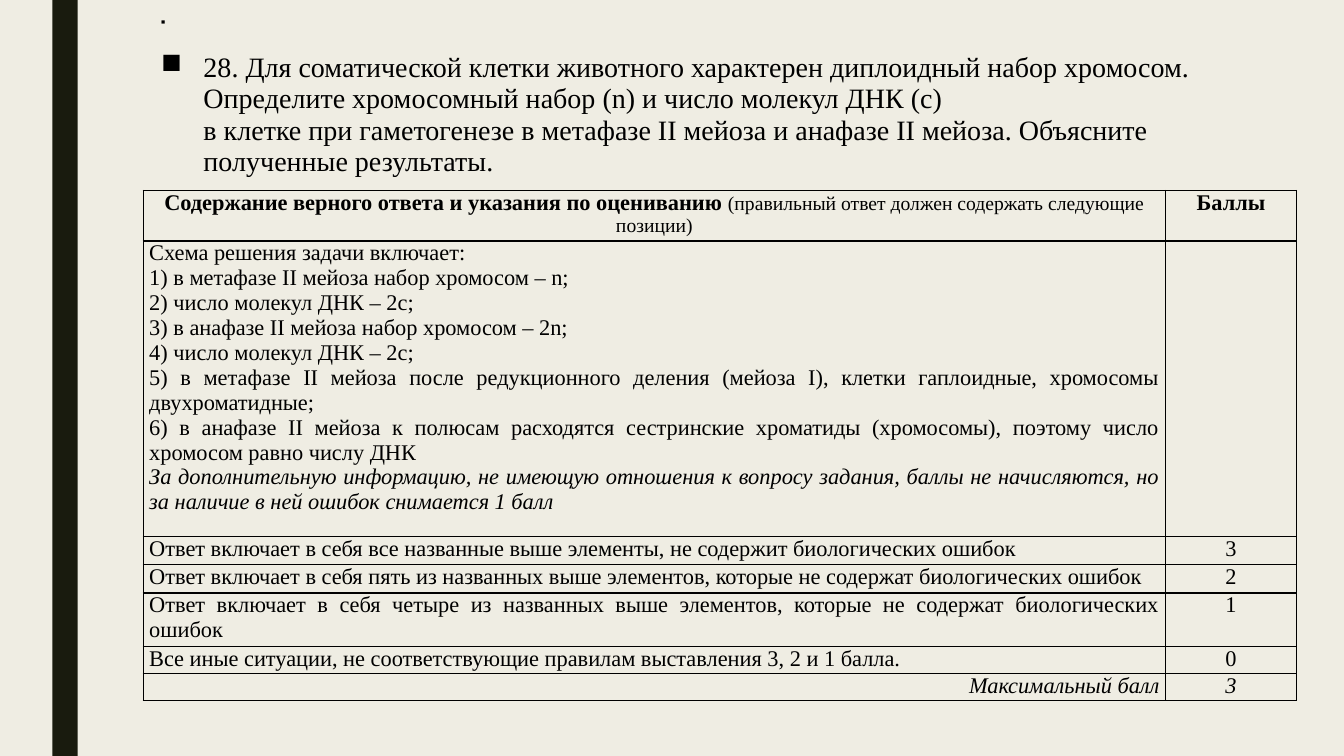
import pptx
import pptx.util
import pptx.dml.color
import pptx.enum.shapes
import pptx.enum.text
import pptx.oxml
import pptx.oxml.ns

Inches, Pt = pptx.util.Inches, pptx.util.Pt
ALIGN = pptx.enum.text.PP_ALIGN
LEFT, RIGHT, MID, FULL = ALIGN.LEFT, ALIGN.RIGHT, ALIGN.CENTER, ALIGN.JUSTIFY

# Content
TASK = ("28. Для соматической клетки животного характерен диплоидный набор хромосом. "
        "Определите хромосомный набор (n) и число молекул ДНК (с) \v"
        "в клетке при гаметогенезе в метафазе II мейоза и анафазе II мейоза. "
        "Объясните полученные результаты.")
HEAD = "Содержание верного ответа и указания по оцениванию "
HINT = "(правильный ответ должен содержать следующие позиции)"
STEPS = [
    "Схема решения задачи включает:",
    "1) в метафазе II мейоза набор хромосом – n;",
    "2) число молекул ДНК – 2с;",
    "3) в анафазе II мейоза набор хромосом – 2n;",
    "4) число молекул ДНК – 2с;",
    "5) в метафазе II мейоза после редукционного деления (мейоза I), "
    "клетки гаплоидные, хромосомы двухроматидные; ",
    "6) в анафазе II мейоза к полюсам расходятся сестринские хроматиды "
    "(хромосомы), поэтому число хромосом равно числу ДНК ",
]
NOTE = ("За дополнительную информацию, не имеющую отношения к вопросу задания, "
        "баллы не начисляются, но за наличие в ней ошибок снимается 1 балл")
MARKS = [
    ("Ответ включает в себя все названные выше элементы, "
     "не содержит биологических ошибок", "3"),
    ("Ответ включает в себя пять из названных выше элементов, "
     "которые не содержат биологических ошибок", "2"),
    ("Ответ включает в себя четыре из названных выше элементов, "
     "которые не содержат биологических ошибок", "1"),
    ("Все иные ситуации, не соответствующие правилам выставления 3, 2 и 1 балла.", "0"),
]
TOTAL = ("Максимальный балл", "3")
COLS = [10.14, 1.3]
ROWS = [0.45, 2.72, 0.28, 0.28, 0.49, 0.25, 0.25]
COLORS = {"back": "EFEDE3", "bar": "191B0E", "ink": "000000"}
FONT = "Times New Roman"


def rgb(name):
    return pptx.dml.color.RGBColor.from_string(COLORS[name])


def style(par, size, align, bold=False, slant=False):
    par.alignment = align
    font = par.font
    font.name, font.size, font.bold, font.italic = FONT, Pt(size), bold, slant
    font.color.rgb = rgb("ink")


def xml(tag, body="", attrs=""):
    return pptx.oxml.parse_xml(
        f'<a:{tag} {pptx.oxml.ns.nsdecls("a")} {attrs}>{body}</a:{tag}>')


def bullet(par):
    props = par._p.get_or_add_pPr()
    props.set("marL", str(Inches(0.42)))
    props.set("indent", str(-Inches(0.42)))
    mark = xml("buChar", attrs='char="■"')
    first = props.find(pptx.oxml.ns.qn("a:defRPr"))
    if first is None:
        props.append(mark)
    else:
        first.addprevious(mark)


def border(cell):
    props = cell._tc.get_or_add_tcPr()
    line = f'<a:solidFill><a:srgbClr val="{COLORS["ink"]}"/></a:solidFill>'
    for spot, side in enumerate(["lnL", "lnR", "lnT", "lnB"]):
        props.insert(spot, xml(side, line, f'w="{Pt(1)}"'))


def fill(cell, lines, align, **look):
    frame = cell.text_frame
    for spot, line in enumerate(lines):
        par = frame.add_paragraph() if spot else frame.paragraphs[0]
        par.text = line
        style(par, 16, align, **look)
    return frame


# Slide and side bar
deck = pptx.Presentation()
deck.slide_width, deck.slide_height = Inches(13.33), Inches(7.5)
slide = deck.slides.add_slide(deck.slide_layouts[6])
slide.background.fill.solid()
slide.background.fill.fore_color.rgb = rgb("back")
bar = slide.shapes.add_shape(pptx.enum.shapes.MSO_SHAPE.RECTANGLE,
                             Inches(0.52), 0, Inches(0.25), Inches(7.5))
bar.shadow.inherit = False
bar.fill.solid()
bar.fill.fore_color.rgb = rgb("bar")
bar.line.fill.background()

# Task text under a tiny bullet
box = slide.shapes.add_textbox(Inches(1.5), Inches(0.21), Inches(10.5), Inches(6.2))
frame = box.text_frame
frame.word_wrap = True
for spot, (text, size, align, gap, after) in enumerate([
        (" ", 4, FULL, 0.07, 8), (TASK, 20, LEFT, 0.94, 2)]):
    par = frame.add_paragraph() if spot else frame.paragraphs[0]
    par.text = text
    style(par, size, align)
    par.line_spacing, par.space_before, par.space_after = gap, Pt(10), Pt(after)
    for run in par.runs:
        run.font.size = Pt(size)
    bullet(par)

# Score table
table = slide.shapes.add_table(len(ROWS), len(COLS), Inches(1.42), Inches(1.89),
                               Inches(sum(COLS)), Inches(sum(ROWS))).table
table.first_row = table.horz_banding = False
for col, width in zip(table.columns, COLS):
    col.width = Inches(width)
for row, height in zip(table.rows, ROWS):
    row.height = Inches(height)
for cell in table.iter_cells():
    cell.margin_left = cell.margin_right = Inches(0.06)
    cell.margin_top = cell.margin_bottom = 0
    cell.fill.background()
    border(cell)

# Head row
head = fill(table.cell(0, 0), [HEAD], MID, bold=True)
hint = head.paragraphs[0].add_run()
hint.text = HINT
hint.font.size, hint.font.bold = Pt(14), False
fill(table.cell(0, 1), ["Баллы"], MID, bold=True)

# Answer, marks and total
steps = fill(table.cell(1, 0), STEPS + [NOTE], FULL)
steps.paragraphs[-1].font.italic = True
for spot, (rule, mark) in enumerate(MARKS, 2):
    fill(table.cell(spot, 0), [rule], FULL)
    fill(table.cell(spot, 1), [mark], MID)
last = len(ROWS) - 1
fill(table.cell(last, 0), TOTAL[:1], RIGHT, slant=True)
fill(table.cell(last, 1), TOTAL[1:], MID, slant=True)

deck.save("out.pptx")
